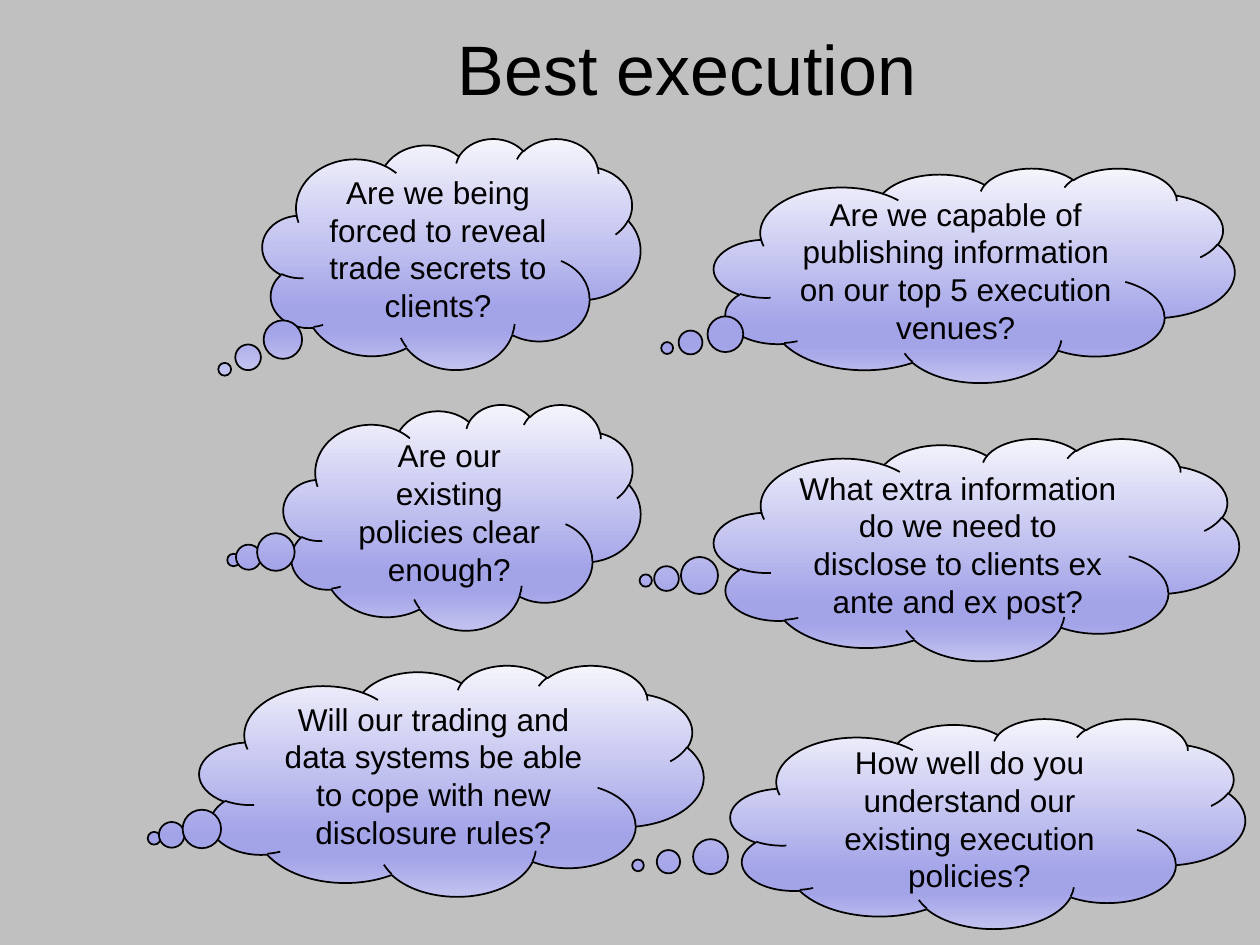
from pptx import Presentation
from pptx import util as u
from pptx.dml.color import RGBColor
from pptx.enum import shapes, text
from pptx.oxml import parse_xml
from pptx.oxml.ns import nsdecls

THEME = {
    "font": "Arial",
    "ink": RGBColor.from_string("000000"),
    "background": RGBColor.from_string("C0C0C0"),
    "cloud_stops": [(0, "F5F5FC"), (74, "A3A3E8"), (83, "A3A3E8"), (100, "C2C2F0")],
    "title_size": 40,
    "cloud_size": 18,
    "line_width": 1,
}

TITLE = ("Best execution", (246, 11.5, 293, 54))

# Question, (left, top, width, height), tail offset from centre as share of size
CLOUDS = [
    ("Are we being forced to reveal trade secrets to clients?",
     (150, 79, 216, 132), (-0.6, 0.5)),
    ("Are our existing policies clear enough?",
     (162, 231, 204, 129), (-0.64, 0.19)),
    ("Will our trading and data systems be able to cope with new disclosure rules?",
     (114, 380, 288, 132), (-0.59, 0.25)),
    ("Are we capable of publishing information on our top 5 execution venues?",
     (408, 96, 297.5, 122.5), (-0.59, 0.34)),
    ("What extra information do we need to disclose to clients ex ante and ex post?",
     (408, 250.5, 300, 127), (-0.63, 0.14)),
    ("How well do you understand our existing execution policies?",
     (417.5, 410.5, 294, 120), (-0.68, 0.2)),
]


def points(values):
    return [u.Pt(value) for value in values]


def write(box, words, size):
    frame = box.text_frame
    frame.word_wrap = True
    frame.vertical_anchor = text.MSO_ANCHOR.MIDDLE
    para = frame.paragraphs[0]
    para.alignment = text.PP_ALIGN.CENTER
    span = para.add_run()
    span.text = words
    span.font.name = THEME["font"]
    span.font.size = u.Pt(size)
    span.font.color.rgb = THEME["ink"]


def fill_gradient(box, stops):
    """Fill from top to bottom with any number of (percent, colour) stops."""
    box.fill.gradient()
    box.fill.gradient_angle = 270
    stop_list = box.fill._fill._gradFill.gsLst
    for old in list(stop_list):
        stop_list.remove(old)
    for percent, colour in stops:
        stop_list.append(parse_xml(
            f'<a:gs {nsdecls("a")} pos="{percent * 1000}">'
            f'<a:srgbClr val="{colour}"/></a:gs>'))


def add_cloud(page, question, place, tail):
    cloud = page.shapes.add_shape(
        shapes.MSO_SHAPE.CLOUD_CALLOUT, *points(place))
    cloud.shadow.inherit = False
    for index, offset in enumerate(tail):
        cloud.adjustments[index] = offset
    fill_gradient(cloud, THEME["cloud_stops"])
    cloud.line.color.rgb = THEME["ink"]
    cloud.line.width = u.Pt(THEME["line_width"])
    write(cloud, question, THEME["cloud_size"])


def main():
    deck = Presentation()
    deck.slide_width, deck.slide_height = points((720, 540))
    page = deck.slides.add_slide(deck.slide_layouts[5])
    page.background.fill.solid()
    page.background.fill.fore_color.rgb = THEME["background"]

    words, place = TITLE
    title = page.shapes.title
    title.left, title.top, title.width, title.height = points(place)
    write(title, words, THEME["title_size"])

    for cloud in CLOUDS:
        add_cloud(page, *cloud)
    deck.save("out.pptx")


if __name__ == "__main__":
    main()
